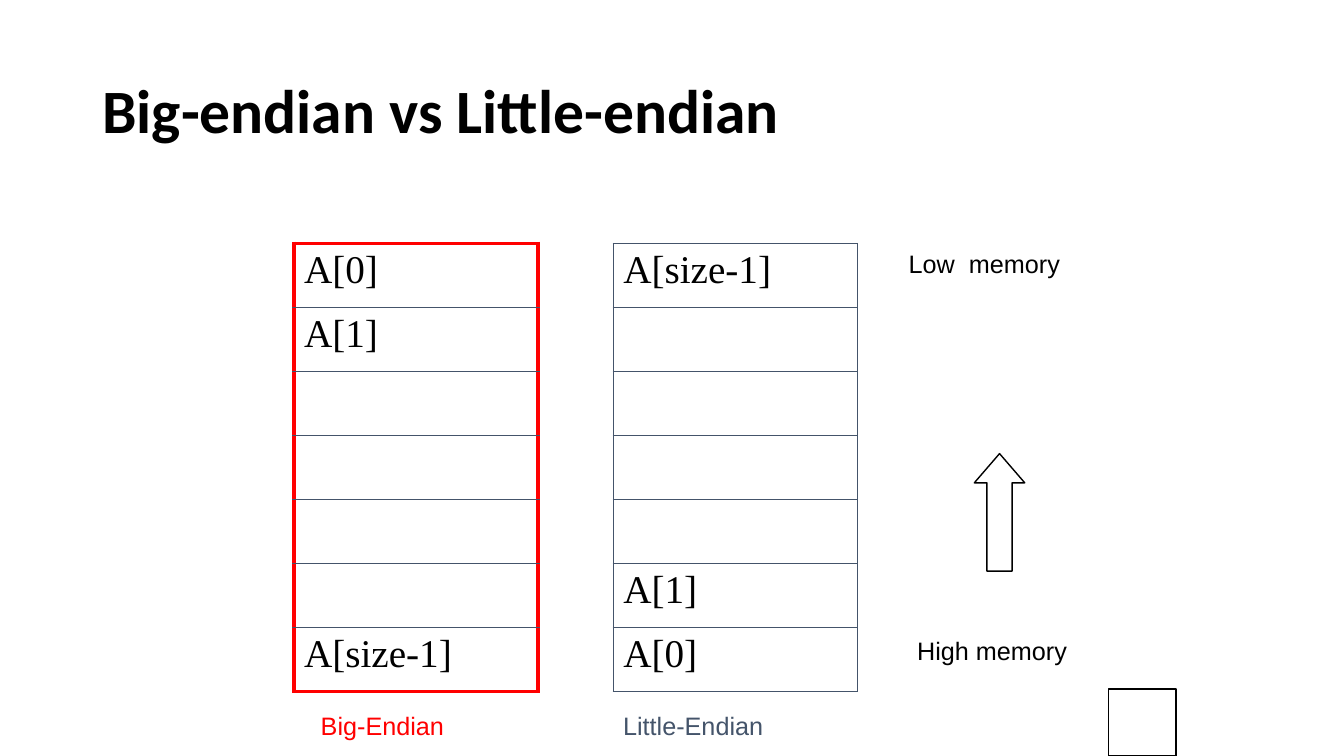
import pptx
import pptx.dml.color
import pptx.enum.shapes
import pptx.enum.text
import pptx.oxml
import pptx.oxml.ns
import pptx.util

Pt = pptx.util.Pt
SHAPE = pptx.enum.shapes.MSO_SHAPE
ANCHOR = pptx.enum.text.MSO_ANCHOR

COLORS = {"black": "000000", "white": "FFFFFF", "red": "FF0000", "slate": "44546A"}
FORMATS = {
    "title": {"name": "Calibri", "size": Pt(44), "bold": True},
    "cell": {"name": "Times New Roman", "size": Pt(28)},
    "label": {"name": "Arial", "size": Pt(18)},
}
ROW_COUNT = 7
ROW_HEIGHT = 45.7
COLUMN_WIDTH = 174.5
MEMORY_TOP = 174


class MemorySlide:
    def __init__(self, slide, colors, formats):
        self.slide = slide
        self.colors = colors
        self.formats = formats

    def rgb(self, color):
        return pptx.dml.color.RGBColor.from_string(self.colors[color])

    def add_words(self, frame, text, style, color="black"):
        paragraph = frame.paragraphs[0]
        run = paragraph.add_run()
        run.text = text
        for attribute, value in self.formats[style].items():
            setattr(run.font, attribute, value)
        run.font.color.rgb = self.rgb(color)
        return paragraph

    def text(self, box, text, style, color="black", wrap=True, anchor=ANCHOR.TOP):
        frame = self.slide.shapes.add_textbox(*map(Pt, box)).text_frame
        frame.word_wrap = wrap
        frame.vertical_anchor = anchor
        return self.add_words(frame, text, style, color)

    def shape(self, kind, box, adjustments=()):
        shape = self.slide.shapes.add_shape(kind, *map(Pt, box))
        shape.shadow.inherit = False
        shape.fill.solid()
        shape.fill.fore_color.rgb = self.rgb("white")
        shape.line.color.rgb = self.rgb("black")
        shape.line.width = Pt(1)
        for index, value in enumerate(adjustments):
            shape.adjustments[index] = value

    def border(self, cell, side, color, width):
        properties = cell._tc.get_or_add_tcPr()
        properties.append(pptx.oxml.parse_xml(
            f'<a:ln{side} {pptx.oxml.ns.nsdecls("a")} w="{Pt(width)}">'
            f'<a:solidFill><a:srgbClr val="{self.colors[color]}"/></a:solidFill>'
            f'</a:ln{side}>'
        ))

    def memory(self, left, entries, frame_color, frame_width):
        table = self.slide.shapes.add_table(
            ROW_COUNT, 1, Pt(left), Pt(MEMORY_TOP),
            Pt(COLUMN_WIDTH), Pt(ROW_COUNT * ROW_HEIGHT),
        ).table
        table.first_row = False
        table.horz_banding = False
        outer, inner = (frame_color, frame_width), ("slate", 1)
        for index, row in enumerate(table.rows):
            row.height = Pt(ROW_HEIGHT)
            cell = row.cells[0]
            borders = {
                "L": outer,
                "R": outer,
                "T": outer if index == 0 else inner,
                "B": outer if index == ROW_COUNT - 1 else inner,
            }
            for side, (color, width) in borders.items():
                self.border(cell, side, color, width)
            cell.fill.background()
            if index in entries:
                self.add_words(cell.text_frame, entries[index], "cell")


def main():
    presentation = pptx.Presentation()
    presentation.slide_width = Pt(960)
    presentation.slide_height = Pt(540)
    slide = presentation.slides.add_slide(presentation.slide_layouts[6])
    endianness = MemorySlide(slide, COLORS, FORMATS)

    heading = endianness.text(
        (66, 28.75, 828, 104.4), "Big-endian vs Little-endian", "title", anchor=ANCHOR.MIDDLE
    )
    heading.line_spacing = 0.9

    last = ROW_COUNT - 1
    endianness.memory(210, {0: "A[0]", 1: "A[1]", last: "A[size-1]"}, "red", 3)
    endianness.memory(438, {0: "A[size-1]", last - 1: "A[1]", last: "A[0]"}, "slate", 1)

    endianness.shape(SHAPE.UP_ARROW, (696, 324, 36, 84), (0.5, 0.58))
    endianness.text((648, 450, 162, 29), "High memory", "label")
    endianness.text((642, 174, 162, 29), "Low  memory", "label")
    endianness.text((222, 504, 103.5, 29), "Big-Endian", "label", "red", wrap=False)
    endianness.text((438, 504, 115, 29), "Little-Endian", "label", "slate", wrap=False)
    endianness.shape(SHAPE.ACTION_BUTTON_CUSTOM, (792, 492, 48, 48))

    presentation.save("out.pptx")


if __name__ == "__main__":
    main()
